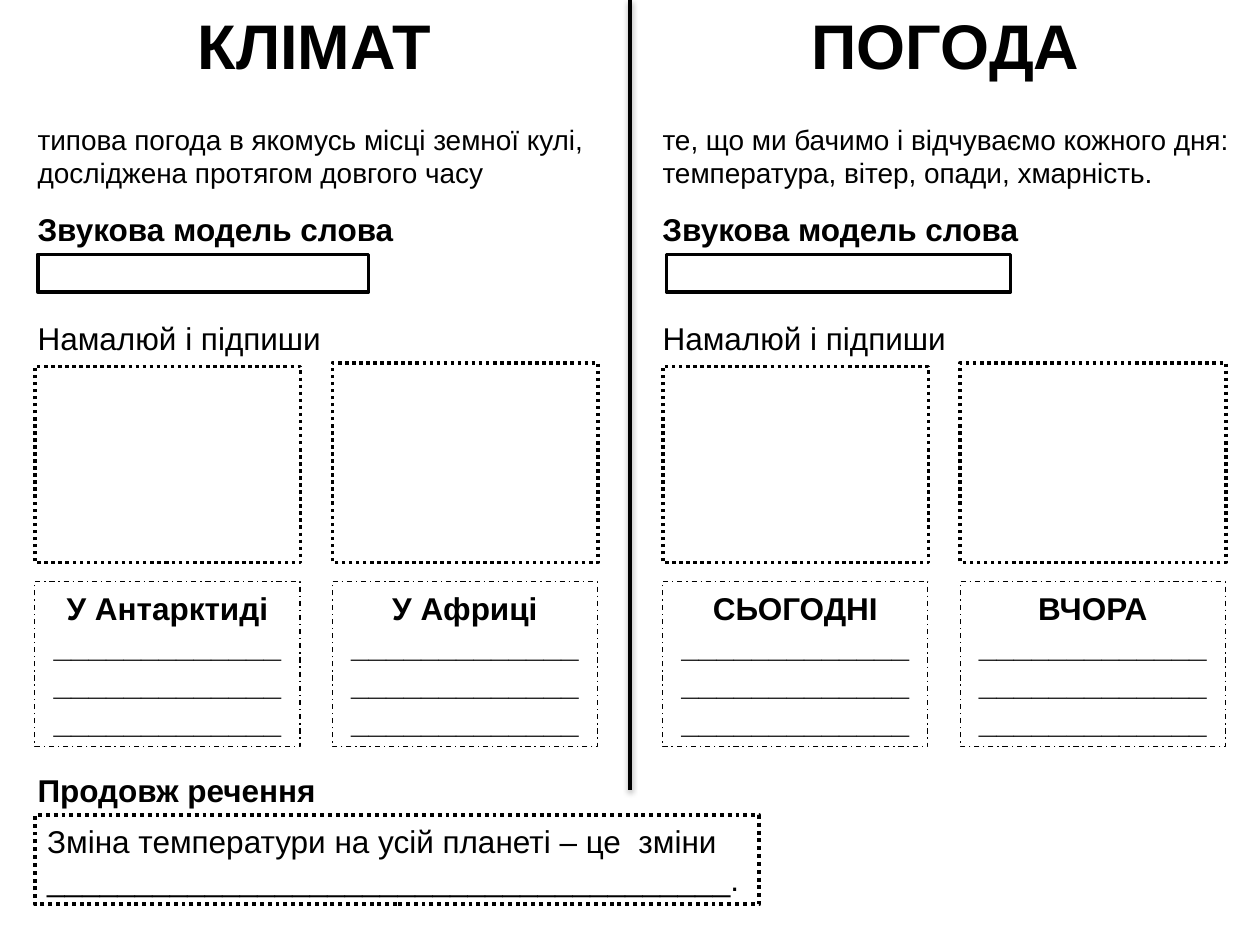
from dataclasses import dataclass
from lxml import etree
from pptx import Presentation
from pptx.dml.color import RGBColor
from pptx.enum.dml import MSO_LINE
from pptx.enum.shapes import MSO_CONNECTOR, MSO_SHAPE
from pptx.enum.text import MSO_ANCHOR, PP_ALIGN
from pptx.oxml.ns import nsdecls
from pptx.slide import Slide
from pptx.util import Pt

BLACK = RGBColor(0, 0, 0)
WHITE = RGBColor(255, 255, 255)
LEFT, CENTER = PP_ALIGN.LEFT, PP_ALIGN.CENTER
TOP, MIDDLE = MSO_ANCHOR.TOP, MSO_ANCHOR.MIDDLE
DOTTED, DASH_DOT = MSO_LINE.ROUND_DOT, MSO_LINE.DASH_DOT
RECTANGLE, STRAIGHT = MSO_SHAPE.RECTANGLE, MSO_CONNECTOR.STRAIGHT
BLANK_LAYOUT = 6

WRITING_LINES = "_" * 39
DIVIDER_SHADOW = (
    f'<a:effectLst {nsdecls("a")}><a:outerShdw blurRad="{Pt(3.1)}" dist="{Pt(1.6)}" '
    'dir="5400000" rotWithShape="0"><a:srgbClr val="000000"><a:alpha val="38000"/>'
    '</a:srgbClr></a:outerShdw></a:effectLst>'
)


@dataclass
class Worksheet:
    slide: Slide
    font: str = "Arial"
    ink: RGBColor = BLACK
    paper: RGBColor = WHITE

    def fill_text(self, frame, paragraphs, size, bold, align, anchor):
        frame.word_wrap = True
        frame.vertical_anchor = anchor
        for index, text in enumerate(paragraphs):
            paragraph = frame.add_paragraph() if index else frame.paragraphs[0]
            paragraph.alignment = align
            run = paragraph.add_run()
            run.text = text
            run.font.name = self.font
            run.font.size = Pt(size)
            run.font.bold = bold
            run.font.color.rgb = self.ink

    def text(self, x, y, width, height, text, size=18, bold=False, align=LEFT):
        box = self.slide.shapes.add_textbox(Pt(x), Pt(y), Pt(width), Pt(height))
        self.fill_text(box.text_frame, [text], size, bold, align, TOP)

    def frame(self, x, y, width, height, weight=2, dash=None, filled=True,
              paragraphs=(), bold=False, align=LEFT):
        box = self.slide.shapes.add_shape(RECTANGLE, Pt(x), Pt(y), Pt(width), Pt(height))
        box.shadow.inherit = False
        if filled:
            box.fill.solid()
            box.fill.fore_color.rgb = self.paper
        else:
            box.fill.background()
        box.line.color.rgb = self.ink
        box.line.width = Pt(weight)
        if dash is not None:
            box.line.dash_style = dash
        self.fill_text(box.text_frame, paragraphs, 18, bold, align, MIDDLE)

    def divider(self, x, top, bottom):
        line = self.slide.shapes.add_connector(STRAIGHT, Pt(x), Pt(top), Pt(x), Pt(bottom))
        line.line.color.rgb = self.ink
        line.line.width = Pt(2)
        line._element.spPr.append(etree.fromstring(DIVIDER_SHADOW))

    def topic(self, title, title_x, definition, definition_width, text_x,
              sound_x, sound_width, cards_x, captions):
        # Title and definition
        self.text(title_x, 0, 359.3, 51, title, 36, True, CENTER)
        self.text(text_x, 66.2, definition_width, 46, definition, 16)
        # Sound model of the word
        self.text(text_x, 116.6, 272, 28.8, "Звукова модель слова", bold=True)
        self.frame(sound_x, 145.4, sound_width, 21.6, filled=False)
        # Drawing frames, each with a captioned card below
        self.text(text_x, 178.6, 245, 28.8, "Намалюй і підпиши")
        for index, caption in enumerate(captions):
            x = cards_x + 170 * index
            drawing_top = 209.3 - 2 * index
            self.frame(x, drawing_top, 151.8, 321.4 - drawing_top, dash=DOTTED)
            self.frame(x, 332.4, 151.5, 94.3, 0.75, DASH_DOT,
                       paragraphs=[caption, WRITING_LINES], bold=True, align=CENTER)


def main():
    deck = Presentation()
    deck.slide_width, deck.slide_height = Pt(720), Pt(540)
    sheet = Worksheet(deck.slides.add_slide(deck.slide_layouts[BLANK_LAYOUT]))

    # Two topics side by side
    sheet.topic("КЛІМАТ", 0,
                "типова погода в якомусь місці земної кулі, досліджена протягом довгого часу",
                339, 14.4, 21.6, 189, 19.9, ["У Антарктиді", "У Африці"])
    sheet.topic("ПОГОДА", 360.7,
                "те, що ми бачимо і відчуваємо кожного дня: температура, вітер, опади, хмарність.",
                345, 371.5, 380.9, 196.6, 378.7, ["СЬОГОДНІ", "ВЧОРА"])
    sheet.divider(360, 0, 451.4)

    # Sentence to complete
    sheet.text(14.4, 437, 212, 28.8, "Продовж речення", bold=True)
    sheet.frame(19.9, 465.8, 414, 51, 2.25, DOTTED, paragraphs=[
        f"Зміна температури на усій планеті – це  зміни {WRITING_LINES}."])

    deck.save("out.pptx")


if __name__ == "__main__":
    main()
